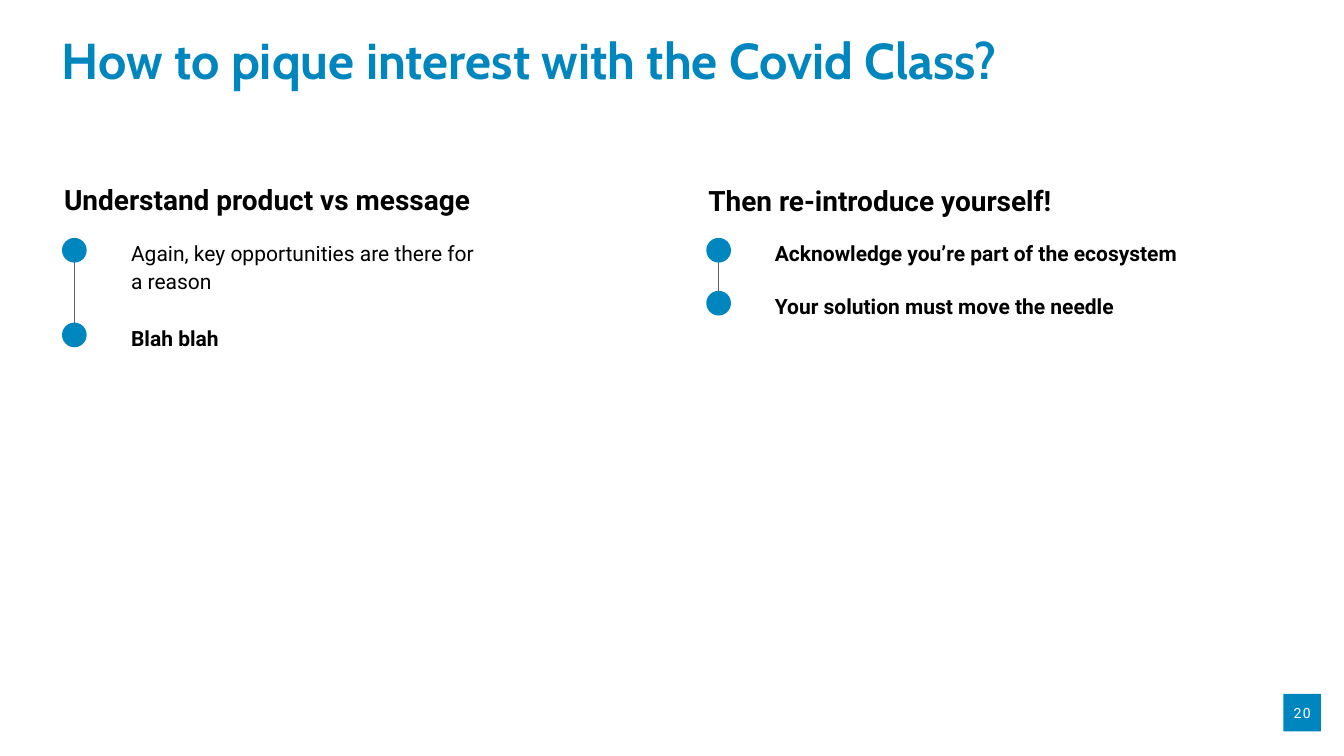
from pptx import Presentation
from pptx.dml.color import RGBColor
from pptx.enum.shapes import MSO_CONNECTOR, MSO_SHAPE
from pptx.enum.text import MSO_ANCHOR, MSO_AUTO_SIZE, PP_ALIGN
from pptx.oxml.ns import qn
from pptx.util import Inches, Pt
from lxml import etree

STRAIGHT = MSO_CONNECTOR.STRAIGHT
OVAL, RECTANGLE = MSO_SHAPE.OVAL, MSO_SHAPE.RECTANGLE
TOP, MIDDLE = MSO_ANCHOR.TOP, MSO_ANCHOR.MIDDLE
LEFT, CENTER = PP_ALIGN.LEFT, PP_ALIGN.CENTER
NO_AUTOFIT = MSO_AUTO_SIZE.NONE

BLUE, GRAY, BLACK, WHITE = "0086BF", "606264", "000000", "FFFFFF"
DOT = 0.49


def write(box, text, size, color=BLACK, bold=True, font="Roboto",
          spacing=1.1, align=LEFT, anchor=TOP):
    """Fill a box with one formatted paragraph and no inner margins."""
    frame = box.text_frame
    frame.text = text
    frame.word_wrap = True
    frame.auto_size = NO_AUTOFIT
    frame.vertical_anchor = anchor
    frame.margin_left = frame.margin_right = 0
    frame.margin_top = frame.margin_bottom = 0
    para = frame.paragraphs[0]
    para.alignment = align
    para.line_spacing = spacing
    para.space_before = Pt(0)
    span = para.runs[0]
    span.font.name = font
    span.font.size = Pt(size)
    span.font.bold = bold
    span.font.color.rgb = RGBColor.from_string(color)
    return span


def add_blue_shape(kind, left, top, size):
    shape = slide.shapes.add_shape(
        kind, Inches(left), Inches(top), Inches(size), Inches(size))
    shape.shadow.inherit = False
    shape.fill.solid()
    shape.fill.fore_color.rgb = RGBColor.from_string(BLUE)
    shape.line.fill.background()


deck = Presentation()
deck.slide_width, deck.slide_height = Inches(26.66), Inches(15)
slide = deck.slides.add_slide(deck.slide_layouts[5])

# Page number
add_blue_shape(RECTANGLE, 25.46, 13.77, 0.74)
number = slide.shapes.add_textbox(
    Inches(25.57), Inches(13.92), Inches(0.52), Inches(0.44))
span = write(number, "20", 20, WHITE, bold=False, spacing=1,
             align=CENTER, anchor=MIDDLE)
span.font._element.set("spc", "200")

# Title
title = slide.shapes.title
title.left, title.top = Inches(1.22), Inches(0.85)
title.width, title.height = Inches(24.24), Inches(1.98)
write(title, "How to pique interest with the Covid Class?", 72, BLUE,
      font="Cabin", spacing=0.75)

# Columns: dot left, text left, heading top, heading, points (top, width, bold, text)
columns = [
    (1.23, 2.6, 3.56, "Understand product vs message", [
        (4.72, 7, False, "Again, key opportunities are there for a reason"),
        (6.4, 10.16, True, "Blah blah")]),
    (14.01, 15.37, 3.57, "Then re-introduce yourself!", [
        (4.72, 9.61, True, "Acknowledge you’re part of the ecosystem"),
        (5.77, 7.61, True, "Your solution must move the needle")]),
]
for dot_left, text_left, heading_top, heading, points in columns:
    box = slide.shapes.add_textbox(
        Inches(dot_left + 0.04), Inches(heading_top), Inches(9.78), Inches(0.68))
    write(box, heading, 40)

    center = Inches(dot_left + DOT / 2)
    line = slide.shapes.add_connector(
        STRAIGHT, center, Inches(points[0][0] + DOT / 2),
        center, Inches(points[-1][0] + DOT / 2))
    line.line.color.rgb = RGBColor.from_string(GRAY)
    line.line.width = Pt(2.25)
    etree.SubElement(line._element.spPr, qn("a:effectLst"))

    for top, width, bold, text in points:
        add_blue_shape(OVAL, dot_left, top, DOT)
        height = 0.51 if bold else 1.07
        box = slide.shapes.add_textbox(
            Inches(text_left), Inches(top), Inches(width), Inches(height))
        write(box, text, 30, bold=bold)

deck.save("out.pptx")
